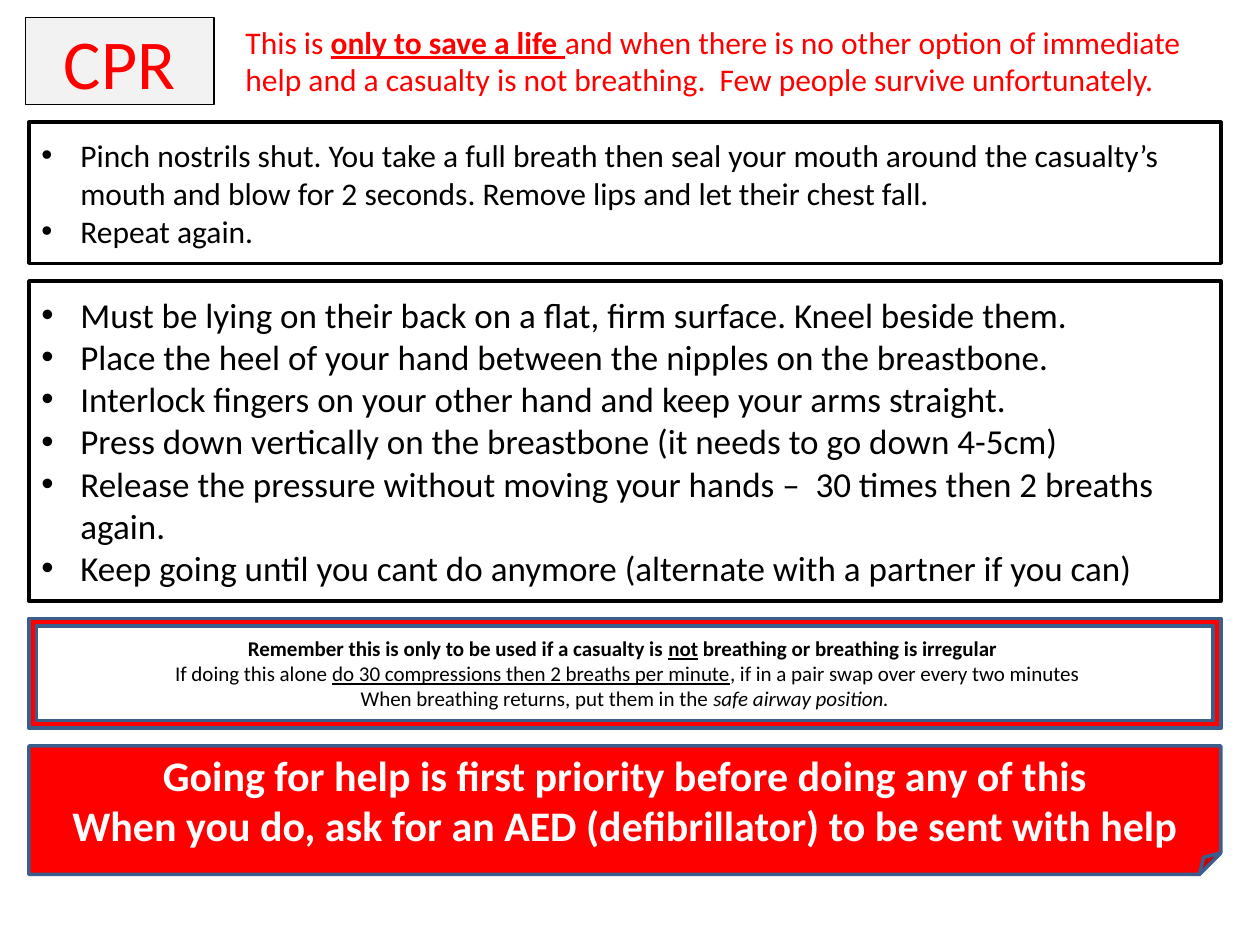
from lxml.etree import SubElement
from pptx import Presentation
from pptx.dml.color import RGBColor
from pptx.enum.shapes import MSO_SHAPE
from pptx.enum.text import MSO_ANCHOR, PP_ALIGN
from pptx.oxml.ns import qn
from pptx.util import Inches, Pt

COLORS = {"red": "FF0000", "black": "000000", "white": "FFFFFF",
          "gray": "F2F2F2", "blue": "3A5F8C"}
LEFT, WIDTH, GAP = 0.23, 9.46, 0.14
BULLET_INDENT = Inches(0.31)


def write_text(shape, paragraphs, size, color, align=PP_ALIGN.LEFT,
               anchor=MSO_ANCHOR.MIDDLE, bullets=False):
    """Each paragraph is a list of (text, style); style letters are b, i and u."""
    frame = shape.text_frame
    frame.word_wrap = True
    frame.vertical_anchor = anchor
    for index, runs in enumerate(paragraphs):
        paragraph = frame.paragraphs[0] if index == 0 else frame.add_paragraph()
        paragraph.alignment = align
        if bullets:
            properties = paragraph._p.get_or_add_pPr()
            properties.set("marL", str(BULLET_INDENT))
            properties.set("indent", str(-BULLET_INDENT))
            SubElement(properties, qn("a:buFont"), typeface="Arial")
            SubElement(properties, qn("a:buChar"), char="•")
        for text, style in runs:
            run = paragraph.add_run()
            run.text = text
            run.font.name = "Calibri"
            run.font.size = Pt(size)
            run.font.color.rgb = RGBColor.from_string(COLORS[color])
            run.font.bold = "b" in style
            run.font.italic = "i" in style
            run.font.underline = "u" in style


def add_box(kind, left, top, width, height, fill, line, line_width):
    shape = slide.shapes.add_shape(
        kind, Inches(left), Inches(top), Inches(width), Inches(height))
    shape.shadow.inherit = False
    shape.fill.solid()
    shape.fill.fore_color.rgb = RGBColor.from_string(COLORS[fill])
    shape.line.color.rgb = RGBColor.from_string(COLORS[line])
    shape.line.width = Pt(line_width)
    return shape


presentation = Presentation()
presentation.slide_width, presentation.slide_height = Inches(10), Inches(7.5)
slide = presentation.slides.add_slide(presentation.slide_layouts[6])

# Heading
title = add_box(MSO_SHAPE.RECTANGLE, 0.2, 0.14, 1.5, 0.69, "gray", "black", 0.75)
write_text(title, [[("CPR", "")]], size=40, color="red", align=PP_ALIGN.CENTER)

warning = slide.shapes.add_textbox(
    Inches(1.85), Inches(0.13), Inches(8.03), Inches(0.71))
write_text(warning, [[
    ("This is ", ""),
    ("only to save a life ", "bu"),
    ("and when there is no other option of immediate help and a casualty is "
     "not breathing.  Few people survive unfortunately.", ""),
]], size=18, color="red", anchor=MSO_ANCHOR.TOP)

# Stacked panels
breaths = [
    "Pinch nostrils shut. You take a full breath then seal your mouth around the "
    "casualty’s mouth and blow for 2 seconds. Remove lips and let their chest fall.",
    "Repeat again.",
]
compressions = [
    "Must be lying on their back on a flat, firm surface. Kneel beside them.",
    "Place the heel of your hand between the nipples on the breastbone.",
    "Interlock fingers on your other hand and keep your arms straight.",
    "Press down vertically on the breastbone (it needs to go down 4-5cm)",
    "Release the pressure without moving your hands –  30 times then 2 breaths again.",
    "Keep going until you cant do anymore (alternate with a partner if you can)",
]
reminder = [
    [("Remember this is only to be used if a casualty is ", "b"), ("not", "bu"),
     (" breathing or breathing is irregular ", "b")],
    [(" If doing this alone ", ""),
     ("do 30 compressions then 2 breaths per minute", "u"),
     (", if in a pair swap over every two minutes", "")],
    [("When breathing returns, put them in the ", ""),
     ("safe airway position.", "i")],
]
priority = [
    [("Going for help is first priority before doing any of this", "b")],
    [("When you do, ask for an AED (defibrillator) to be sent with help", "b")],
]

steps_style = {"color": "black", "bullets": True}
panels = [
    (MSO_SHAPE.RECTANGLE, 1.12, "white", "black",
     [[(step, "")] for step in breaths], {"size": 18, **steps_style}),
    (MSO_SHAPE.RECTANGLE, 2.54, "white", "black",
     [[(step, "")] for step in compressions], {"size": 20, **steps_style}),
    (MSO_SHAPE.FRAME, 0.87, "red", "blue", reminder,
     {"size": 12, "color": "black", "align": PP_ALIGN.CENTER}),
    (MSO_SHAPE.FOLDED_CORNER, 1.02, "red", "blue", priority,
     {"size": 24, "color": "white", "align": PP_ALIGN.CENTER}),
]
top = 0.97
for kind, height, fill, line, paragraphs, text_format in panels:
    panel = add_box(kind, LEFT, top, WIDTH, height, fill, line, 2)
    if kind == MSO_SHAPE.FRAME:
        panel.adjustments[0] = 0.07
    write_text(panel, paragraphs, **text_format)
    top += height + GAP

presentation.save("out.pptx")
